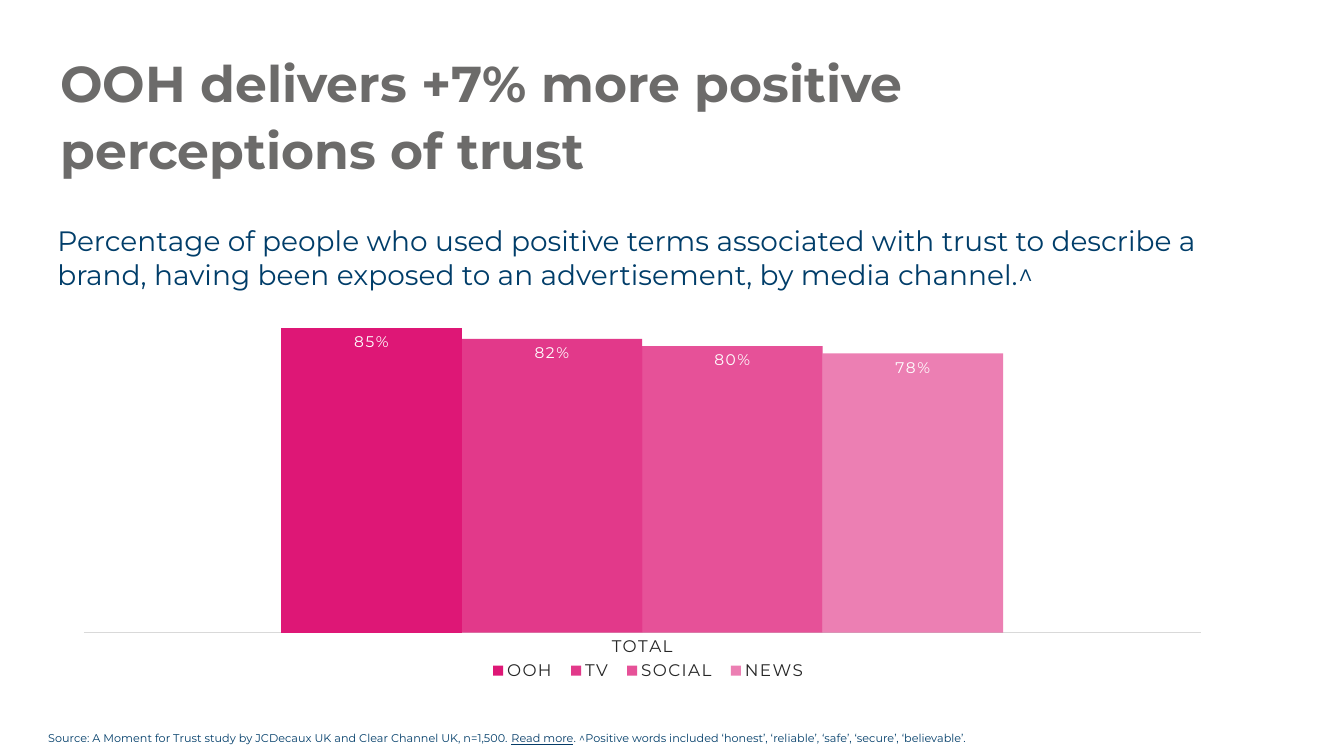
from dataclasses import dataclass

import pptx
import pptx.chart.data
import pptx.dml.color
import pptx.enum.chart
import pptx.enum.text
import pptx.oxml
import pptx.oxml.ns
import pptx.util
from pptx.dml.color import RGBColor
from pptx.util import Inches

FONT = "Montserrat"
GREY = RGBColor(0x6C, 0x6B, 0x6A)
NAVY = RGBColor(0x00, 0x3D, 0x69)
LINK_NAVY = RGBColor(0x06, 0x3C, 0x68)
PINK = RGBColor(0xDE, 0x17, 0x76)
CHARCOAL = RGBColor(0x26, 0x26, 0x26)
LIGHT_GREY = RGBColor(0xD9, 0xD9, 0xD9)
WHITE = RGBColor(0xFF, 0xFF, 0xFF)


@dataclass(frozen=True)
class Channel:
    name: str
    share: float
    opacity: int


CHANNELS = [
    Channel("OOH", 0.85, 100),
    Channel("TV", 0.82, 85),
    Channel("SOCIAL", 0.80, 75),
    Channel("NEWS", 0.78, 55),
]


def format_font(font, size: float, color: RGBColor, bold: bool = False, underline: bool = False) -> None:
    font.name = FONT
    font.size = pptx.util.Pt(size)
    font.color.rgb = color
    font.bold = bold
    font.underline = underline


def add_text(paragraph, text: str, *, size: float, color: RGBColor,
             bold: bool = False, underline: bool = False) -> None:
    run = paragraph.add_run()
    run.text = text
    format_font(run.font, size, color, bold, underline)


def add_text_box(slide, left: float, top: float, width: float, height: float):
    text_box = slide.shapes.add_textbox(Inches(left), Inches(top), Inches(width), Inches(height))
    text_box.text_frame.word_wrap = True
    return text_box.text_frame.paragraphs[0]


def format_chart_text(owner, size: float, color: RGBColor) -> None:
    format_font(owner.font, size, color)
    for properties in owner.font._element.iter(pptx.oxml.ns.qn("a:defRPr")):
        properties.set("spc", "100")


def set_layout(element, index: int, inner: bool, x: float, y: float, w: float, h: float) -> None:
    for previous in element.findall(pptx.oxml.ns.qn("c:layout")):
        element.remove(previous)
    target = '<c:layoutTarget val="inner"/>' if inner else ""
    sizes = "".join(f'<c:{tag} val="{value}"/>' for tag, value in zip("xywh", (x, y, w, h)))
    element.insert(index, pptx.oxml.parse_xml(
        f'<c:layout {pptx.oxml.ns.nsdecls("c")}><c:manualLayout>{target}'
        f'<c:xMode val="edge"/><c:yMode val="edge"/>{sizes}</c:manualLayout></c:layout>'))


def format_series(series, channel: Channel) -> None:
    fill = series.format.fill
    fill.solid()
    fill.fore_color.rgb = PINK
    if channel.opacity < 100:
        color = next(series._element.iter(pptx.oxml.ns.qn("a:srgbClr")))
        color.append(pptx.oxml.parse_xml(
            f'<a:alpha {pptx.oxml.ns.nsdecls("a")} val="{channel.opacity * 1000}"/>'))
    series.invert_if_negative = False
    labels = series.data_labels
    labels.show_value = True
    labels.number_format = "0%"
    labels.number_format_is_linked = False
    labels.position = pptx.enum.chart.XL_LABEL_POSITION.INSIDE_END
    format_chart_text(labels, 11, WHITE)


def add_trust_chart(slide) -> None:
    data = pptx.chart.data.CategoryChartData(number_format="0%")
    data.categories = ["TOTAL"]
    for channel in CHANNELS:
        data.add_series(channel.name, [channel.share])
    chart = slide.shapes.add_chart(
        pptx.enum.chart.XL_CHART_TYPE.COLUMN_CLUSTERED,
        Inches(0.6), Inches(3), Inches(11.54), Inches(3.95), data).chart
    chart.has_title = False
    format_font(chart.font, 11, CHARCOAL)

    plot = chart.plots[0]
    plot.gap_width = 219
    plot.overlap = 0
    plot.vary_by_categories = False
    for series, channel in zip(plot.series, CHANNELS):
        format_series(series, channel)

    category_axis = chart.category_axis
    category_axis.major_tick_mark = pptx.enum.chart.XL_TICK_MARK.NONE
    category_axis.format.line.color.rgb = LIGHT_GREY
    category_axis.format.line.width = pptx.util.Pt(0.75)
    format_chart_text(category_axis.tick_labels, 12, CHARCOAL)

    value_axis = chart.value_axis
    value_axis.minimum_scale = 0
    value_axis.maximum_scale = 0.9
    value_axis.has_major_gridlines = False
    value_axis.visible = False

    chart.has_legend = True
    legend = chart.legend
    legend.position = pptx.enum.chart.XL_LEGEND_POSITION.BOTTOM
    legend.include_in_layout = False
    format_chart_text(legend, 12, CHARCOAL)

    plot_area = chart._chartSpace.chart.plotArea
    set_layout(plot_area, 0, True, 0.02, 0.02, 0.96, 0.81)
    set_layout(legend._element, 1, False, 0.36, 0.89, 0.29, 0.07)


def add_title(slide) -> None:
    title = slide.shapes.title
    title.left, title.top = Inches(0.6), Inches(0.46)
    title.width, title.height = Inches(9.23), Inches(0.6)
    frame = title.text_frame
    frame.margin_left = frame.margin_top = frame.margin_right = frame.margin_bottom = 0
    frame.word_wrap = True
    frame.auto_size = pptx.enum.text.MSO_AUTO_SIZE.NONE
    frame.vertical_anchor = pptx.enum.text.MSO_ANCHOR.TOP
    paragraph = frame.paragraphs[0]
    paragraph.alignment = pptx.enum.text.PP_ALIGN.LEFT
    paragraph.line_spacing = 1.1
    add_text(paragraph, "OOH delivers +7% more positive perceptions of trust",
             size=36, color=GREY, bold=True)


def main() -> None:
    presentation = pptx.Presentation()
    presentation.slide_width = Inches(13.33)
    presentation.slide_height = Inches(7.5)
    slide = presentation.slides.add_slide(presentation.slide_layouts[5])
    add_title(slide)

    source = add_text_box(slide, 0.38, 7.21, 12.72, 0.24)
    add_text(source, "Source: A Moment for Trust study by JCDecaux UK and Clear Channel UK, n=1,500. ",
             size=8, color=NAVY)
    add_text(source, "Read more", size=8, color=LINK_NAVY, underline=True)
    add_text(source, ". ^Positive words included ‘honest’, ‘reliable’, ‘safe’, ‘secure’, ‘believable’.",
             size=8, color=NAVY)

    subtitle = add_text_box(slide, 0.47, 2.17, 11.54, 0.77)
    add_text(subtitle, "Percentage of people who used positive terms associated with trust to describe "
             "a brand, having been exposed to an advertisement, by media channel.^",
             size=20, color=NAVY)

    add_trust_chart(slide)
    presentation.save("out.pptx")


if __name__ == "__main__":
    main()
